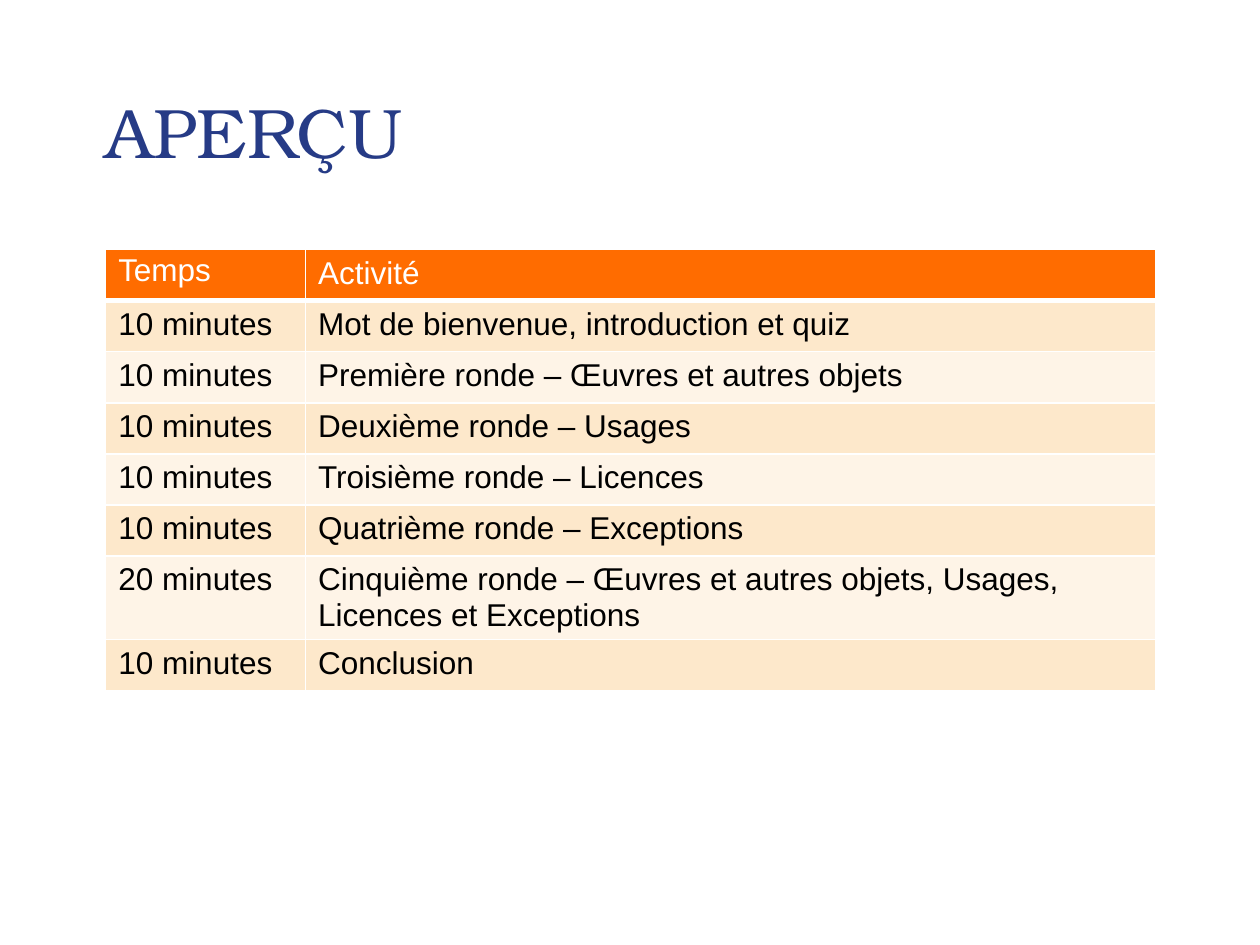
"""Build the workshop overview slide with its timetable."""
import pptx
import pptx.dml.color
import pptx.enum.text
import pptx.oxml
import pptx.oxml.ns
import pptx.util
from pptx.util import Cm

AGENDA = [
    ("Temps", "Activité"),
    ("10 minutes", "Mot de bienvenue, introduction et quiz"),
    ("10 minutes", "Première ronde – Œuvres et autres objets"),
    ("10 minutes", "Deuxième ronde – Usages"),
    ("10 minutes", "Troisième ronde – Licences"),
    ("10 minutes", "Quatrième ronde – Exceptions"),
    ("20 minutes", "Cinquième ronde – Œuvres et autres objets, Usages, "
                   "Licences et Exceptions"),
    ("10 minutes", "Conclusion"),
]


def color(code):
    return pptx.dml.color.RGBColor.from_string(code)


class Deck:
    heading_font, body_font = "TeX Gyre Bonum", "Arial"
    navy, orange, black, white = "263B86", "FF6C00", "000000", "FFFFFF"
    bands = ("FEF4E7", "FDE8CB")

    def __init__(self, width, height):
        self.presentation = pptx.Presentation()
        self.presentation.slide_width = width
        self.presentation.slide_height = height
        self.slide = None

    def add_slide(self):
        layout = self.presentation.slide_layouts.get_by_name("Title Only")
        self.slide = self.presentation.slides.add_slide(layout)

    def style(self, paragraph, font, size, ink):
        paragraph.alignment = pptx.enum.text.PP_ALIGN.LEFT
        for run in paragraph.runs:
            run.font.name = font
            run.font.size = pptx.util.Pt(size)
            run.font.bold = False
            run.font.color.rgb = color(ink)

    def title(self, wording, left, top, width, height):
        heading = self.slide.shapes.title
        heading.left, heading.top = left, top
        heading.width, heading.height = width, height
        frame = heading.text_frame
        frame.text = wording
        frame.vertical_anchor = pptx.enum.text.MSO_ANCHOR.BOTTOM
        self.style(frame.paragraphs[0], self.heading_font, 40, self.navy)

    def border(self, cell, **sides):
        properties = cell._tc.get_or_add_tcPr()
        for side, points in sides.items():
            properties.append(pptx.oxml.parse_xml(
                f'<a:ln{side} {pptx.oxml.ns.nsdecls("a")} w="{pptx.util.Pt(points)}">'
                f'<a:solidFill><a:srgbClr val="{self.white}"/></a:solidFill></a:ln{side}>'))

    def table(self, rows, left, top, widths, row_height):
        timetable = self.slide.shapes.add_table(
            len(rows), len(widths), left, top, sum(widths), row_height * len(rows)).table
        for column, width in zip(timetable.columns, widths):
            column.width = width
        for r, row in enumerate(rows):
            timetable.rows[r].height = row_height
            for c, wording in enumerate(row):
                cell = timetable.cell(r, c)
                self.border(cell, L=1, R=1, T=3 if r == 1 else 1, B=3 if r == 0 else 1)
                cell.fill.solid()
                cell.fill.fore_color.rgb = color(self.bands[r % 2] if r else self.orange)
                cell.text_frame.text = wording
                self.style(cell.text_frame.paragraphs[0], self.body_font, 18,
                           self.black if r else self.white)
        timetable.cell(0, 0).text_frame.paragraphs[0].line_spacing = 0.9


def main():
    deck = Deck(Cm(25.4), Cm(19.05))
    deck.add_slide()
    deck.title("APERÇU", Cm(1.88), Cm(0.48), Cm(16.08), Cm(3.12))
    deck.table(AGENDA, Cm(2.13), Cm(5.03), (Cm(4.03), Cm(17.14)), Cm(1.03))
    deck.presentation.save("out.pptx")


if __name__ == "__main__":
    main()
